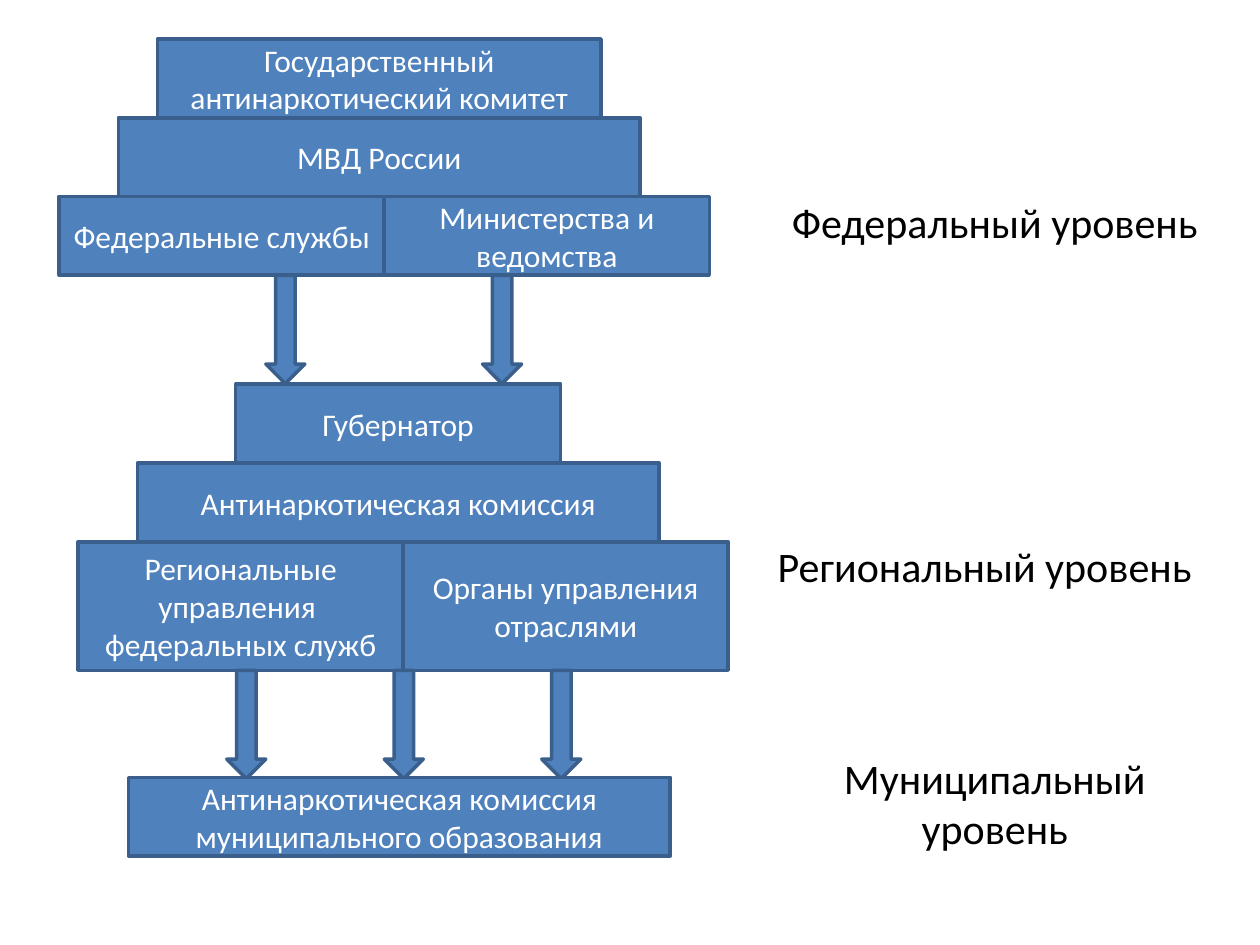
from pptx import Presentation
from pptx.dml.color import RGBColor
from pptx.enum.shapes import MSO_SHAPE
from pptx.enum.text import MSO_ANCHOR, PP_ALIGN
from pptx.util import Inches, Pt

FONT = "Calibri"
BLUE, DARK_BLUE, WHITE, BLACK = "4F81BD", "3A5F8C", "FFFFFF", "000000"
ROW_HEIGHT = Inches(5 / 8)
ARROW_WIDTH, ARROW_HEIGHT = Inches(0.31), Inches(0.86)
LABEL_WIDTH, LABEL_HEIGHT = Inches(3.75), Inches(0.86)

# Rows: offset from the level's left edge, box width, row height, box texts.
# Arrows: offsets from the level's left edge.
LEVELS = [
    {
        "left": Inches(0.47), "top": Inches(0.31),
        "rows": [
            (Inches(0.78), Inches(3.52), ROW_HEIGHT,
             ["Государственный антинаркотический комитет"]),
            (Inches(0.47), Inches(4.14), ROW_HEIGHT, ["МВД России"]),
            (0, Inches(2.58), ROW_HEIGHT,
             ["Федеральные службы", "Министерства и ведомства"]),
        ],
        "arrows": [Inches(1.64), Inches(3.36)],
        "label": ("Федеральный уровень", Inches(6.02), Inches(1.33)),
    },
    {
        "left": Inches(0.62), "top": Inches(3.05),
        "rows": [
            (Inches(1.25), Inches(2.58), ROW_HEIGHT, ["Губернатор"]),
            (Inches(0.47), Inches(4.14), ROW_HEIGHT,
             ["Антинаркотическая комиссия"]),
            (0, Inches(2.58), Inches(1.02),
             ["Региональные управления \nфедеральных служб",
              "Органы управления отраслями"]),
        ],
        "arrows": [Inches(1.18 + 1.25 * index) for index in range(3)],
        "label": ("Региональный уровень", Inches(5.94), Inches(4.06)),
    },
    {
        "left": Inches(1.02), "top": Inches(6.17),
        "rows": [
            (0, Inches(4.3), ROW_HEIGHT,
             ["Антинаркотическая комиссия муниципального образования"]),
        ],
        "arrows": [],
        "label": ("Муниципальный уровень", Inches(6.02), Inches(5.94)),
    },
]


def color(hex_value):
    return RGBColor.from_string(hex_value)


def write_centered(shape, text, size, hex_value):
    text_frame = shape.text_frame
    text_frame.text = text
    text_frame.word_wrap = True
    text_frame.vertical_anchor = MSO_ANCHOR.MIDDLE
    for paragraph in text_frame.paragraphs:
        paragraph.alignment = PP_ALIGN.CENTER
        for run in paragraph.runs:
            run.font.name = FONT
            run.font.size = Pt(size)
            run.font.color.rgb = color(hex_value)


def add_blue_shape(slide, kind, left, top, width, height):
    shape = slide.shapes.add_shape(kind, left, top, width, height)
    shape.shadow.inherit = False
    shape.fill.solid()
    shape.fill.fore_color.rgb = color(BLUE)
    shape.line.color.rgb = color(DARK_BLUE)
    shape.line.width = Pt(2)
    return shape


def add_label(slide, text, left, top):
    label = slide.shapes.add_textbox(left, top, LABEL_WIDTH, LABEL_HEIGHT)
    write_centered(label, text, 24, BLACK)


def add_level(slide, left, top, rows, arrows, label):
    """Stack the rows of boxes, then hang the arrows under the last row."""
    for offset, width, height, texts in rows:
        for column, text in enumerate(texts):
            box = add_blue_shape(slide, MSO_SHAPE.RECTANGLE,
                                 left + offset + column * width, top,
                                 width, height)
            write_centered(box, text, 18, WHITE)
        top += height
    for offset in arrows:
        add_blue_shape(slide, MSO_SHAPE.DOWN_ARROW, left + offset, top,
                       ARROW_WIDTH, ARROW_HEIGHT)
    add_label(slide, *label)


def main():
    presentation = Presentation()
    presentation.slide_width = Inches(10)
    presentation.slide_height = Inches(7.5)
    slide = presentation.slides.add_slide(presentation.slide_layouts[6])
    for level in LEVELS:
        add_level(slide, **level)
    presentation.save("out.pptx")


if __name__ == "__main__":
    main()
